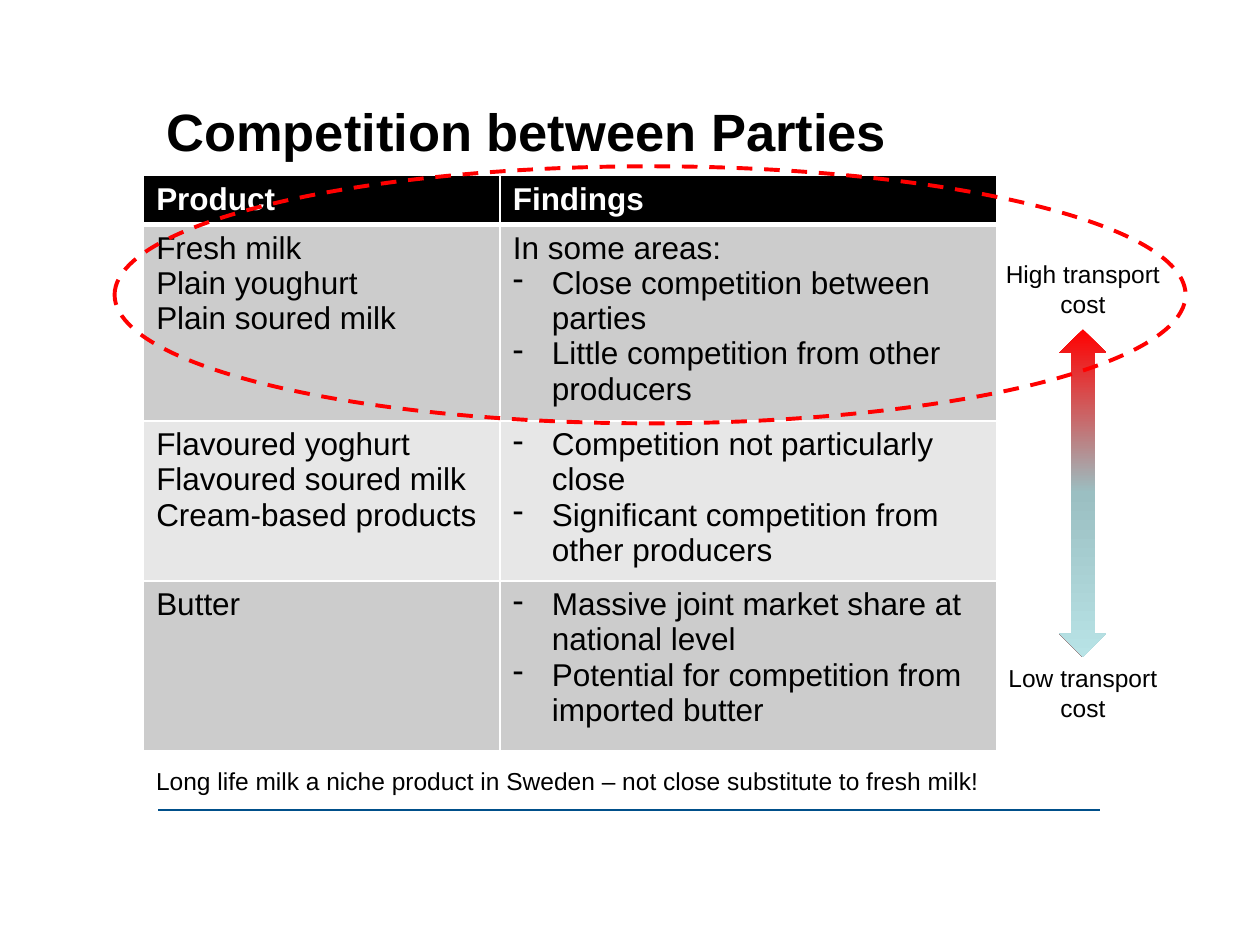
import collections

import lxml.etree
import pptx
import pptx.dml.color
import pptx.enum.dml
import pptx.enum.shapes
import pptx.enum.text
import pptx.oxml.ns
import pptx.util

Box = collections.namedtuple("Box", "left top width height")
UNIT = pptx.util.Inches(0.1)
FONT = "Arial"
HEADER = ["Product", "Findings"]
ROWS = [
    (["Fresh milk", "Plain youghurt", "Plain soured milk"],
     ["In some areas:", "- Close competition between parties",
      "- Little competition from other producers"]),
    (["Flavoured yoghurt", "Flavoured soured milk", "Cream-based products"],
     ["- Competition not particularly close",
      "- Significant competition from other producers"]),
    (["Butter"],
     ["- Massive joint market share at national level",
      "- Potential for competition from imported butter"]),
]
COLUMN_UNITS = [28.3, 39.4]
ROW_UNITS = [3.9, 15.6, 12.7, 13.5]


def colour(value):
    """Turn a hex string into a colour."""
    return pptx.dml.color.RGBColor.from_string(value)


def grid(*units):
    """Give a box in slide lengths from grid units."""
    return Box(*(round(unit * UNIT) for unit in units))


def part(box, left, top, width, height):
    """Give the box that takes the given shares of another box."""
    return Box(round(box.left + left * box.width), round(box.top + top * box.height),
               round(width * box.width), round(height * box.height))


def child(parent, tag, **attributes):
    """Append a drawing element with attributes to a parent."""
    return lxml.etree.SubElement(parent, pptx.oxml.ns.qn(tag), attributes)


def format_para(para, size, value="000000", bold=False):
    """Set the font of every run in a paragraph."""
    for span in para.runs:
        span.font.name = FONT
        span.font.size = pptx.util.Pt(size)
        span.font.bold = bold
        span.font.color.rgb = colour(value)


def add_title(page, box, text):
    """Place and format the title."""
    title = page.shapes.title
    title.left, title.top, title.width, title.height = box
    title.text_frame.text = text
    title.text_frame.vertical_anchor = pptx.enum.text.MSO_ANCHOR.MIDDLE
    para = title.text_frame.paragraphs[0]
    para.alignment = pptx.enum.text.PP_ALIGN.LEFT
    format_para(para, 30, bold=True)


def add_label(page, box, text, align=pptx.enum.text.PP_ALIGN.LEFT):
    """Add a wrapped text box with one small paragraph."""
    frame = page.shapes.add_textbox(*box).text_frame
    frame.word_wrap = True
    frame.text = text
    frame.paragraphs[0].alignment = align
    format_para(frame.paragraphs[0], 14)


def set_borders(cell, bottom):
    """Draw white borders round a cell."""
    properties = cell._tc.get_or_add_tcPr()
    for index, (side, width) in enumerate(zip("LRTB", (1, 1, 1, bottom))):
        line = properties.makeelement(pptx.oxml.ns.qn("a:ln" + side),
                                      {"w": str(pptx.util.Pt(width))})
        properties.insert(index, line)
        child(child(line, "a:solidFill"), "a:srgbClr", val="FFFFFF")


def fill_cell(cell, lines, fill, value="000000", bold=False, bottom=1):
    """Write lines into a cell, with those led by a dash as bullets."""
    cell.fill.solid()
    cell.fill.fore_color.rgb = colour(fill)
    set_borders(cell, bottom)
    cell.text_frame.text = "\n".join(line.removeprefix("- ") for line in lines)
    for para, line in zip(cell.text_frame.paragraphs, lines):
        if line.startswith("- "):
            properties = para._p.get_or_add_pPr()
            indent = pptx.util.Inches(0.31)
            properties.set("marL", str(indent))
            properties.set("indent", str(-indent))
            child(properties, "a:buChar", char="-")
        format_para(para, 18, value, bold)


def add_findings(page, box):
    """Add the table of products and findings."""
    table = page.shapes.add_table(len(ROW_UNITS), len(COLUMN_UNITS), *box).table
    for column, units in zip(table.columns, COLUMN_UNITS):
        column.width = round(box.width * units / sum(COLUMN_UNITS))
    for row, units in zip(table.rows, ROW_UNITS):
        row.height = round(box.height * units / sum(ROW_UNITS))
    for column, heading in enumerate(HEADER):
        fill_cell(table.cell(0, column), [heading], "000000", "FFFFFF", True, 3)
        for row, contents in enumerate(ROWS, 1):
            fill = "CCCCCC" if row % 2 else "E7E7E7"
            fill_cell(table.cell(row, column), contents[column], fill)


def add_transport_scale(page, box):
    """Add the arrow between high and low transport cost."""
    for top, level in ((0, "High"), (0.85, "Low")):
        add_label(page, part(box, 0, top, 1, 0.15), f"{level} transport cost",
                  pptx.enum.text.PP_ALIGN.CENTER)
    arrow = page.shapes.add_shape(pptx.enum.shapes.MSO_SHAPE.UP_DOWN_ARROW,
                                  *part(box, 0.38, 0.16, 0.24, 0.69))
    arrow.shadow.inherit = False
    arrow.line.fill.background()
    arrow.fill.gradient()
    arrow.fill.gradient_angle = 270
    stops = arrow._element.spPr.find(".//" + pptx.oxml.ns.qn("a:gsLst"))
    for stop in list(stops):
        stops.remove(stop)
    for position, value in ((0, "FF0000"), (50, "9BBFC2"), (100, "B8E3E6")):
        child(child(stops, "a:gs", pos=str(position * 1000)), "a:srgbClr", val=value)


def add_highlight(page, box):
    """Add the dashed ellipse round the fresh products."""
    ellipse = page.shapes.add_shape(pptx.enum.shapes.MSO_SHAPE.OVAL, *box)
    ellipse.shadow.inherit = False
    ellipse.fill.background()
    ellipse.line.color.rgb = colour("FF0000")
    ellipse.line.width = pptx.util.Pt(2.25)
    ellipse.line.dash_style = pptx.enum.dml.MSO_LINE.DASH


def add_rule(page, box):
    """Add the thin line at the foot, drawn from right to left."""
    rule = page.shapes.add_connector(pptx.enum.shapes.MSO_CONNECTOR.STRAIGHT,
                                     box.left + box.width, box.top, box.left, box.top)
    rule.line.color.rgb = colour("004F8A")
    rule.line.width = pptx.util.Pt(1)
    child(rule._element.spPr, "a:effectLst")


def main():
    """Build and save the deck."""
    deck = pptx.Presentation()
    deck.slide_width, deck.slide_height = 100 * UNIT, 75 * UNIT
    page = deck.slides.add_slide(deck.slide_layouts[5])
    add_rule(page, grid(12.5, 64.3, 74.8, 0))
    add_title(page, grid(12.2, 6, 74.8, 8.7), "Competition between Parties")
    add_findings(page, grid(11.4, 13.9, sum(COLUMN_UNITS), sum(ROW_UNITS)))
    add_label(page, grid(11.4, 60.3, 69.3, 3.4),
              "Long life milk a niche product in Sweden – not close substitute to fresh milk!")
    add_transport_scale(page, grid(78.1, 20.1, 15.7, 37.7))
    add_highlight(page, grid(9.1, 13.2, 85, 20.4))
    deck.save("out.pptx")


if __name__ == "__main__":
    main()
